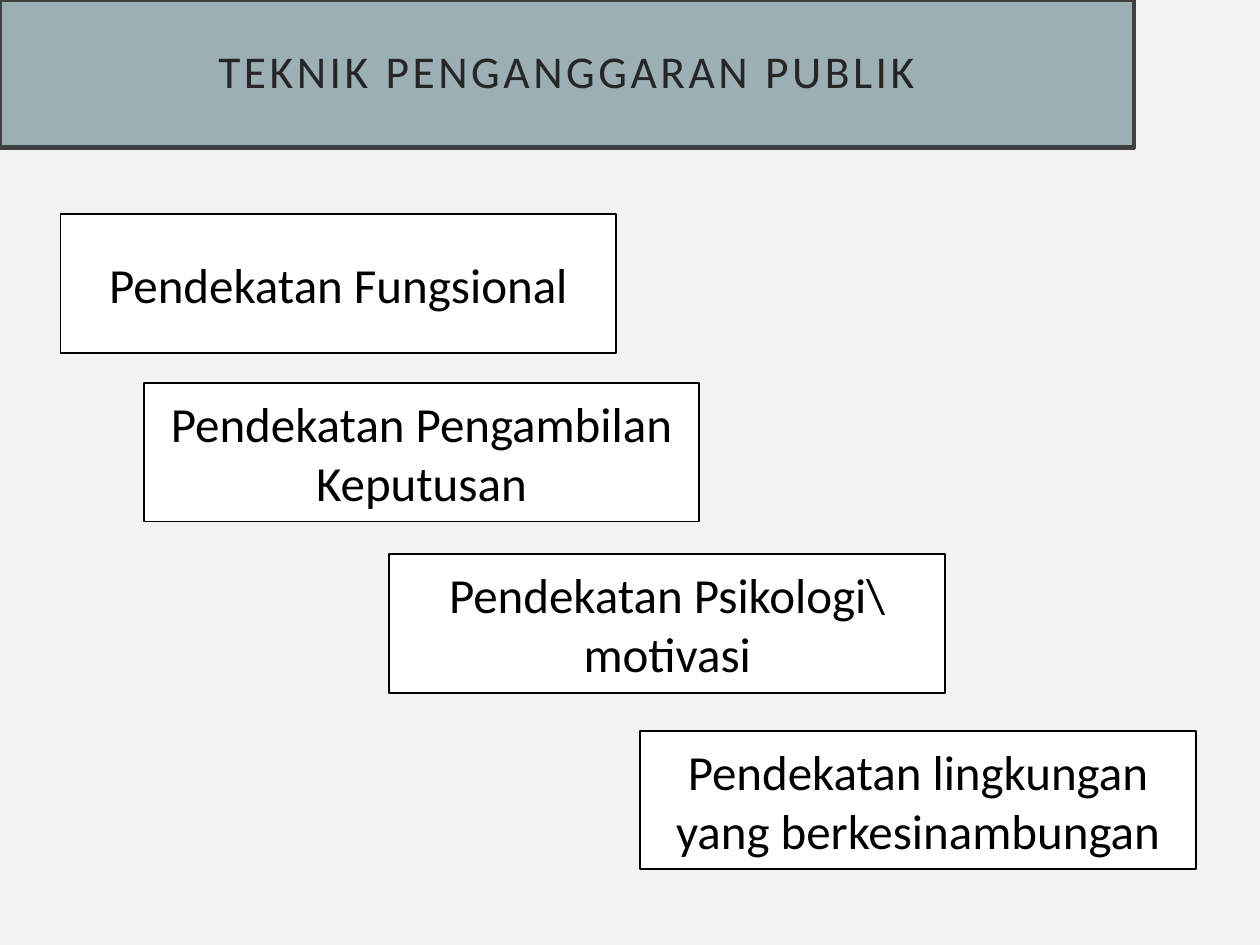
"""Build the slide on public budgeting techniques."""
from pptx import Presentation, util as u
from pptx.dml.color import RGBColor
from pptx.enum import shapes, text

TITLE = "TEKNIK PENGANGGARAN PUBLIK"
APPROACHES = [
    ("Pendekatan Fungsional", 0.48, 1.7),
    ("Pendekatan Pengambilan Keputusan", 1.14, 3.04),
    ("Pendekatan Psikologi\\ motivasi", 3.09, 4.4),
    ("Pendekatan lingkungan yang berkesinambungan", 5.08, 5.8),
]
BOX_W, BOX_H = 4.41, 1.1


def rgb(value):
    return RGBColor.from_string(value)


def paint(sp, fill, line, width):
    sp.fill.solid()
    sp.fill.fore_color.rgb = rgb(fill)
    sp.line.color.rgb = rgb(line)
    sp.line.width = u.Pt(width)


def write(sp, content, size, color, inset=(0.1, 0.05), spacing=None, tracking=None):
    tf = sp.text_frame
    tf.word_wrap = True
    tf.auto_size = text.MSO_AUTO_SIZE.NONE
    tf.vertical_anchor = text.MSO_ANCHOR.MIDDLE
    tf.margin_left = tf.margin_right = u.Inches(inset[0])
    tf.margin_top = tf.margin_bottom = u.Inches(inset[1])
    p = tf.paragraphs[0]
    p.alignment = text.PP_ALIGN.CENTER
    p.line_spacing = spacing
    r = p.add_run()
    r.text = content
    r.font.name = "Calibri"
    r.font.size = u.Pt(size)
    r.font.color.rgb = rgb(color)
    if tracking:
        r.font._element.set("spc", str(tracking * 100))


def main():
    prs = Presentation()
    prs.slide_width, prs.slide_height = u.Inches(10), u.Inches(7.5)
    s = prs.slides.add_slide(prs.slide_layouts[5])
    s.background.fill.solid()
    s.background.fill.fore_color.rgb = rgb("F2F2F2")

    title = s.shapes.title
    title.left, title.top = 0, 0
    title.width, title.height = u.Inches(9), u.Inches(1.17)
    paint(title, "9BAFB5", "404040", 2.5)
    write(title, TITLE, 26, "262626", inset=(0.2, 0.2), spacing=0.9, tracking=2)

    for label, left, top in APPROACHES:
        box = [u.Inches(v) for v in (left, top, BOX_W, BOX_H)]
        sp = s.shapes.add_shape(shapes.MSO_SHAPE.RECTANGLE, *box)
        sp.shadow.inherit = False
        paint(sp, "FFFFFF", "000000", 1)
        write(sp, label, 28, "000000")

    prs.save("out.pptx")


if __name__ == "__main__":
    main()
